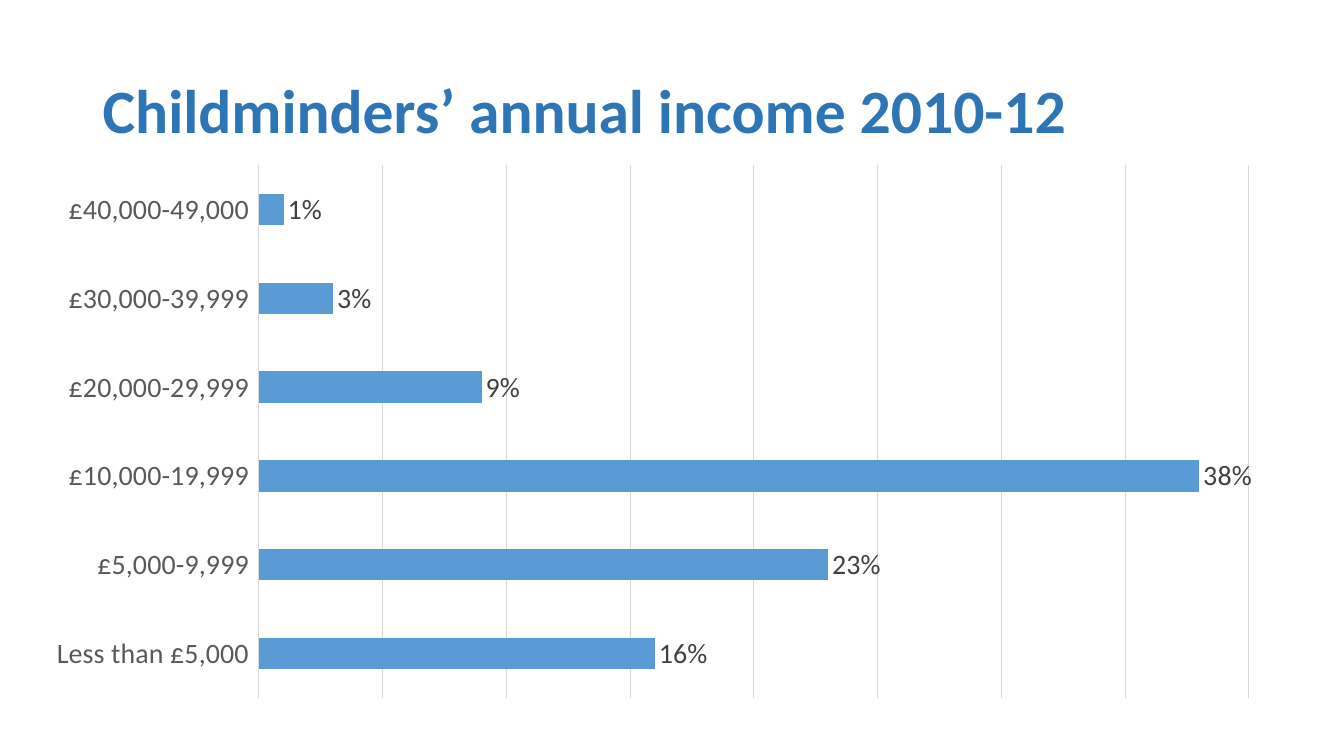
from pptx import Presentation
from pptx.chart.data import CategoryChartData
from pptx.dml.color import RGBColor
from pptx.enum.chart import XL_CHART_TYPE, XL_LABEL_POSITION, XL_TICK_LABEL_POSITION, XL_TICK_MARK
from pptx.enum.text import MSO_ANCHOR
from pptx.oxml import parse_xml
from pptx.oxml.ns import nsdecls, qn
from pptx.util import Inches, Pt

BAR = XL_CHART_TYPE.BAR_CLUSTERED
OUTSIDE_END = XL_LABEL_POSITION.OUTSIDE_END
LABELS_LOW = XL_TICK_LABEL_POSITION.LOW
NO_TICK = XL_TICK_MARK.NONE
MIDDLE = MSO_ANCHOR.MIDDLE

FONT = "Calibri"
GREY_LINE = "D9D9D9"
INCOMES = [
    ("Less than £5,000", 0.16),
    ("£5,000-9,999", 0.23),
    ("£10,000-19,999", 0.38),
    ("£20,000-29,999", 0.09),
    ("£30,000-39,999", 0.03),
    ("£40,000-49,000", 0.01),
]


def rgb(value):
    return RGBColor.from_string(value)


def set_font(font, size, color, bold=False):
    font.name = FONT
    font.size = Pt(size)
    font.bold = bold
    font.color.rgb = rgb(color)


def set_line(line, color, width=0.75):
    line.color.rgb = rgb(color)
    line.width = Pt(width)


def add_text(slide, box, text, size=20, color="000000", bold=False, spacing=1.0):
    tf = slide.shapes.add_textbox(*map(Inches, box)).text_frame
    tf.word_wrap = True
    tf.vertical_anchor = MIDDLE
    p = tf.paragraphs[0]
    p.line_spacing = spacing
    r = p.add_run()
    r.text = text
    set_font(r.font, size, color, bold)


def set_plot_layout(chart, x, y, w, h):
    plot_area = chart._chartSpace.chart.plotArea
    for old in plot_area.findall(qn("c:layout")):
        plot_area.remove(old)
    sides = "".join(f'<c:{k} val="{v}"/>' for k, v in zip("xywh", (x, y, w, h)))
    plot_area.insert(0, parse_xml(
        f'<c:layout {nsdecls("c")}><c:manualLayout><c:layoutTarget val="inner"/>'
        f'<c:xMode val="edge"/><c:yMode val="edge"/>{sides}'
        '</c:manualLayout></c:layout>'))


def style_axes(chart):
    cat = chart.category_axis
    cat.has_major_gridlines = False
    cat.major_tick_mark = cat.minor_tick_mark = NO_TICK
    cat.tick_label_position = LABELS_LOW
    set_font(cat.tick_labels.font, 20, "595959")
    set_line(cat.format.line, GREY_LINE)
    val = chart.value_axis
    val.minimum_scale, val.maximum_scale, val.major_unit = 0, 0.4, 0.05
    val.has_major_gridlines = True
    set_line(val.major_gridlines.format.line, GREY_LINE)
    val.visible = False


def add_bar_chart(slide, box, rows, color):
    data = CategoryChartData(number_format="0%")
    data.categories = [name for name, share in rows]
    data.add_series("Series 1", [share for name, share in rows])
    chart = slide.shapes.add_chart(BAR, *map(Inches, box), data).chart
    chart.has_title = False
    chart.has_legend = False
    set_font(chart.font, 10, "000000")
    style_axes(chart)
    plot = chart.plots[0]
    plot.gap_width = 182
    plot.vary_by_categories = False
    fill = plot.series[0].format.fill
    fill.solid()
    fill.fore_color.rgb = rgb(color)
    labels = plot.series[0].data_labels
    labels.show_value = True
    labels.position = OUTSIDE_END
    labels.number_format = "0%"
    labels.number_format_is_linked = False
    set_font(labels.font, 20, "404040")
    set_plot_layout(chart, 0.185, 0.027, 0.815, 0.945)


def main():
    prs = Presentation()
    prs.slide_width, prs.slide_height = Inches(13.33), Inches(7.5)
    slide = prs.slides.add_slide(prs.slide_layouts[6])
    add_text(slide, (0.92, 0.4, 11.5, 1.45), "Childminders’ annual income 2010-12",
             size=44, color="2E75B6", bold=True, spacing=0.9)
    add_bar_chart(slide, (0.34, 1.49, 12.08, 5.59), INCOMES, "5B9BD5")
    prs.save("out.pptx")


if __name__ == "__main__":
    main()
